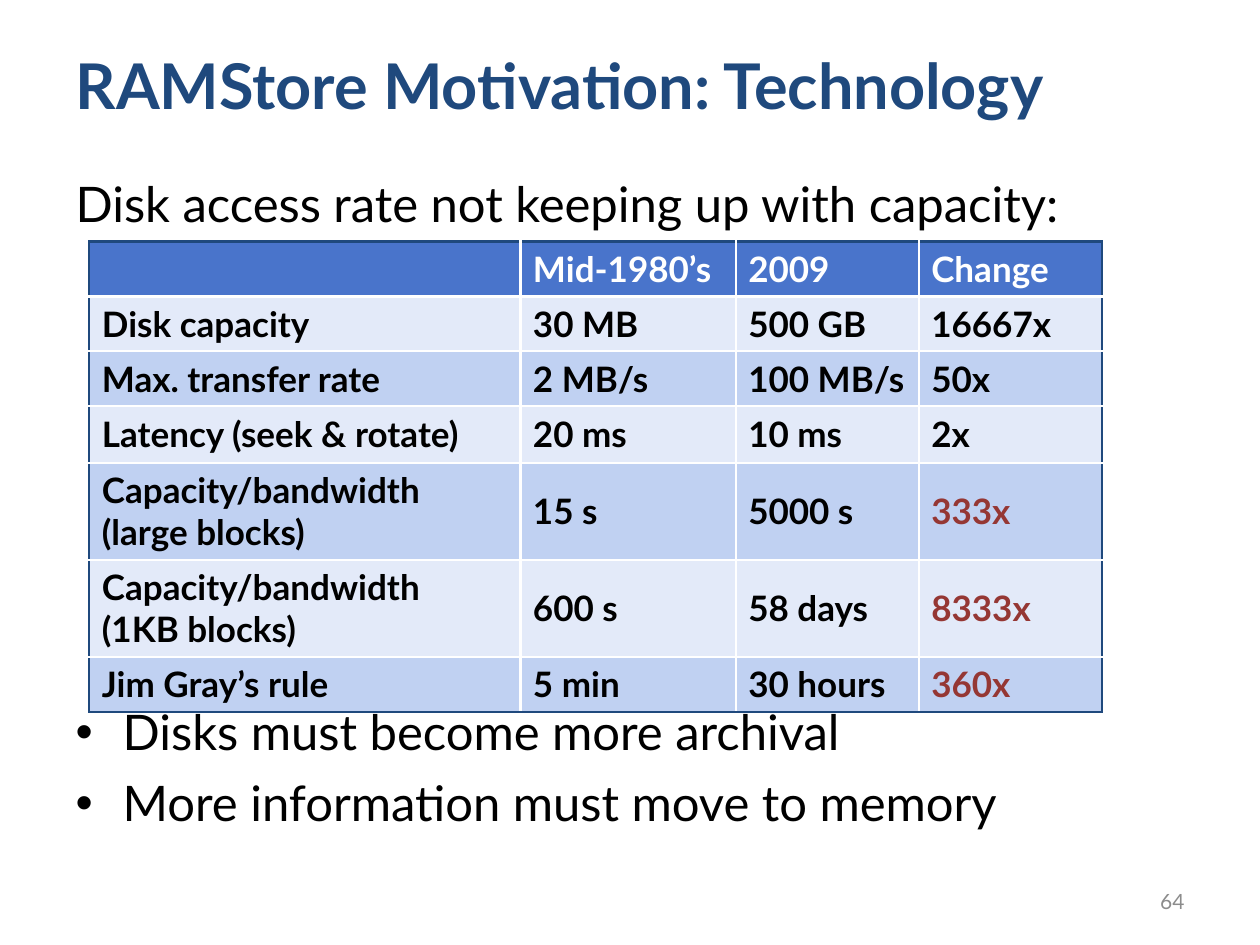
import dataclasses

import lxml.etree
import pptx
import pptx.dml.color
import pptx.enum.text
import pptx.oxml.ns
import pptx.util
from pptx.util import Cm

RGBColor = pptx.dml.color.RGBColor
NAVY = RGBColor(0x1F, 0x49, 0x7D)
BLUE = RGBColor(0x49, 0x74, 0xCB)
PALE = RGBColor(0xE3, 0xEA, 0xF9)
LIGHT = RGBColor(0xC0, 0xD1, 0xF2)
WHITE = RGBColor(0xFF, 0xFF, 0xFF)
BLACK = RGBColor(0x00, 0x00, 0x00)
RED = RGBColor(0x95, 0x37, 0x34)
GRAY = RGBColor(0x8C, 0x8C, 0x8C)
FONT = "Lato"
MIDDLE = pptx.enum.text.MSO_ANCHOR.MIDDLE
TOP = pptx.enum.text.MSO_ANCHOR.TOP


@dataclasses.dataclass(frozen=True)
class BodyLine:
    text: str
    space_before: float
    bulleted: bool


@dataclasses.dataclass(frozen=True)
class TableRow:
    texts: tuple[str, str, str, str]
    height: float = 1.1
    anchor: pptx.enum.text.MSO_ANCHOR = MIDDLE
    change_color: RGBColor = BLACK


BODY_LINES = (
    BodyLine("Disk access rate not keeping up with capacity:", 0, False),
    BodyLine("Disks must become more archival", 268, True),
    BodyLine("More information must move to memory", 7, True),
)
COLUMN_WIDTHS = (8.69, 4.34, 3.69, 3.69)
TABLE_ROWS = (
    TableRow(("", "Mid-1980’s", "2009", "Change"), change_color=WHITE),
    TableRow(("Disk capacity", "30 MB", "500 GB", "16667x"), anchor=TOP),
    TableRow(("Max. transfer rate", "2 MB/s", "100 MB/s", "50x"), anchor=TOP),
    TableRow(("Latency (seek & rotate)", "20 ms", "10 ms", "2x"), 1.14, TOP),
    TableRow(("Capacity/bandwidth\v(large blocks)", "15 s", "5000 s", "333x"),
             1.95, change_color=RED),
    TableRow(("Capacity/bandwidth\v(1KB blocks)", "600 s", "58 days", "8333x"),
             1.95, change_color=RED),
    TableRow(("Jim Gray’s rule", "5 min", "30 hours", "360x"), change_color=RED),
)


def place(shape, left: float, top: float, width: float, height: float) -> None:
    shape.left, shape.top = Cm(left), Cm(top)
    shape.width, shape.height = Cm(width), Cm(height)


def format_spans(para, size: float, color: RGBColor, bold: bool = False) -> None:
    for span in para.runs:
        span.font.name = FONT
        span.font.size = pptx.util.Pt(size)
        span.font.bold = bold
        span.font.color.rgb = color


def add_element(parent, tag: str, **attributes: str):
    return lxml.etree.SubElement(parent, pptx.oxml.ns.qn(tag), **attributes)


def fill_title(title) -> None:
    place(title, 1.27, 0.84, 22.86, 1.7)
    title.text_frame.text = "RAMStore Motivation: Technology"
    title.text_frame.auto_size = pptx.enum.text.MSO_AUTO_SIZE.NONE
    title.text_frame.vertical_anchor = MIDDLE
    para = title.text_frame.paragraphs[0]
    para.alignment = pptx.enum.text.PP_ALIGN.LEFT
    format_spans(para, 36, NAVY, True)


def fill_body(body) -> None:
    place(body, 1.27, 3.38, 22.86, 13.64)
    frame = body.text_frame
    frame.text = "\n".join(line.text for line in BODY_LINES)
    frame.auto_size = pptx.enum.text.MSO_AUTO_SIZE.NONE
    for para, line in zip(frame.paragraphs, BODY_LINES):
        para.space_before = pptx.util.Pt(line.space_before)
        format_spans(para, 28, BLACK)
        properties = para._p.get_or_add_pPr()
        properties.set("marL", str(Cm(0.95)))
        properties.set("indent", str(-Cm(0.95)))
        if line.bulleted:
            add_element(properties, "a:buFont", typeface="Arial")
            add_element(properties, "a:buChar", char="•")
        else:
            add_element(properties, "a:buNone")


def draw_borders(cell, edges: dict[str, RGBColor]) -> None:
    for side, color in edges.items():
        line = add_element(cell._tc.get_or_add_tcPr(), f"a:ln{side}",
                           w=str(pptx.util.Pt(1.5)))
        fill = add_element(line, "a:solidFill")
        add_element(fill, "a:srgbClr", val=str(color))


def add_disk_table(page) -> None:
    frame = page.shapes.add_table(
        len(TABLE_ROWS), len(COLUMN_WIDTHS), Cm(1.8), Cm(4.87),
        Cm(sum(COLUMN_WIDTHS)), Cm(sum(row.height for row in TABLE_ROWS)))
    table = frame.table
    for column, width in zip(table.columns, COLUMN_WIDTHS):
        column.width = Cm(width)
    last_row, last_column = len(TABLE_ROWS) - 1, len(COLUMN_WIDTHS) - 1
    for i, row in enumerate(TABLE_ROWS):
        table.rows[i].height = Cm(row.height)
        background = BLUE if i == 0 else PALE if i % 2 else LIGHT
        for j, text in enumerate(row.texts):
            cell = table.cell(i, j)
            draw_borders(cell, {
                "L": NAVY if j == 0 else WHITE,
                "R": NAVY if j == last_column else WHITE,
                "T": NAVY if i == 0 else WHITE,
                "B": NAVY if i == last_row else WHITE,
            })
            cell.fill.solid()
            cell.fill.fore_color.rgb = background
            cell.vertical_anchor = row.anchor
            para = cell.text_frame.paragraphs[0]
            para.text = text
            color = WHITE if i == 0 else BLACK
            format_spans(para, 20, row.change_color if j == last_column else color, True)


def add_page_number(page) -> None:
    box = page.shapes.add_textbox(Cm(18.2), Cm(17.65), Cm(5.93), Cm(1.02))
    box.text_frame.word_wrap = True
    box.text_frame.vertical_anchor = MIDDLE
    para = box.text_frame.paragraphs[0]
    para.text = "64"
    para.alignment = pptx.enum.text.PP_ALIGN.RIGHT
    format_spans(para, 12, GRAY)


def main() -> None:
    deck = pptx.Presentation()
    deck.slide_width, deck.slide_height = Cm(25.4), Cm(19.05)
    page = deck.slides.add_slide(deck.slide_layouts[1])
    fill_title(page.shapes.title)
    fill_body(page.placeholders[1])
    add_disk_table(page)
    add_page_number(page)
    deck.save("out.pptx")


if __name__ == "__main__":
    main()
